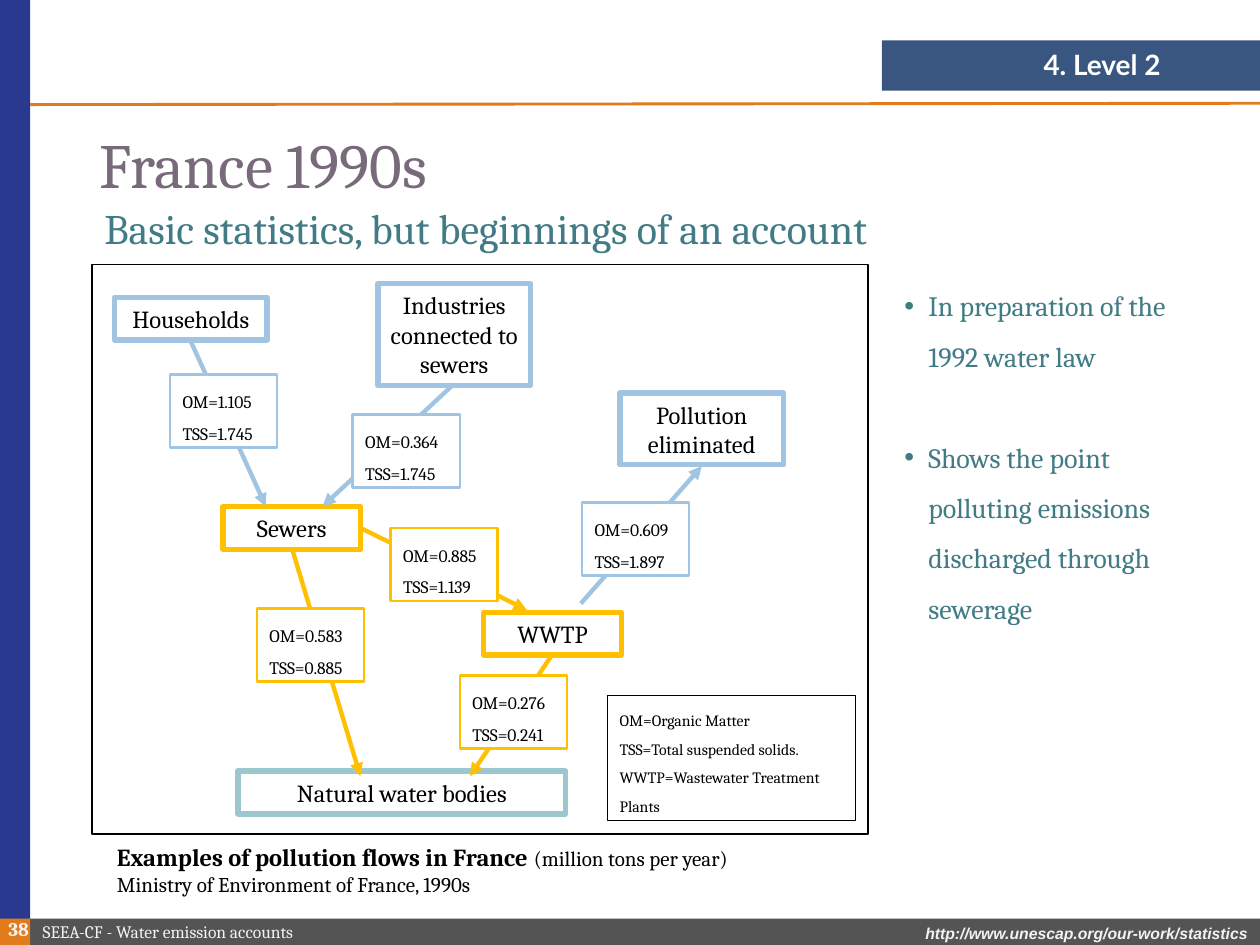
from dataclasses import dataclass

from lxml import etree
from pptx import Presentation
from pptx.dml.color import RGBColor
from pptx.enum.shapes import MSO_CONNECTOR, MSO_SHAPE
from pptx.enum.text import MSO_ANCHOR, PP_ALIGN
from pptx.oxml.ns import qn
from pptx.util import Inches, Pt

RECT, STRAIGHT = MSO_SHAPE.RECTANGLE, MSO_CONNECTOR.STRAIGHT
TOP, MIDDLE = MSO_ANCHOR.TOP, MSO_ANCHOR.MIDDLE
LEFT, CENTER, RIGHT = PP_ALIGN.LEFT, PP_ALIGN.CENTER, PP_ALIGN.RIGHT


@dataclass(frozen=True)
class Theme:
    serif: str = "Cambria"
    sans: str = "Arial"
    badge_font: str = "Lato"
    black: str = "000000"
    white: str = "FFFFFF"
    pale: str = "F2F2F2"
    navy: str = "2A3990"
    badge: str = "395681"
    grey: str = "545454"
    orange: str = "E17B1C"
    mauve: str = "78697B"
    teal: str = "417B85"
    source: str = "A1C4E3"
    treatment: str = "FFC000"
    water: str = "9CC7CE"
    title: int = 36
    subtitle: int = 24
    body: int = 16
    node: int = 14
    caption: int = 12
    number: int = 11
    label: int = 10
    small: int = 9


THEME = Theme()


@dataclass(frozen=True)
class Box:
    left: float
    top: float
    width: float
    height: float

    def inner(self, left, top, width, height):
        return Box(self.left + left, self.top + top, width, height)

    def point(self, x, y):
        return Inches(self.left + x), Inches(self.top + y)

    def emu(self):
        return [Inches(v) for v in (self.left, self.top, self.width, self.height)]


def rgb(value):
    return RGBColor.from_string(value)


def style(font, size, color, name=THEME.serif, bold=None, italic=None):
    font.size, font.name, font.bold, font.italic = Pt(size), name, bold, italic
    font.color.rgb = rgb(color)


def write(shape, lines, size, color, align=LEFT, anchor=TOP, spacing=None, **looks):
    frame = shape.text_frame
    frame.word_wrap = True
    frame.vertical_anchor = anchor
    for index, line in enumerate(lines):
        paragraph = frame.paragraphs[0] if index == 0 else frame.add_paragraph()
        paragraph.text = line
        paragraph.alignment = align
        if spacing:
            paragraph.line_spacing = spacing
        style(paragraph.font, size, color, **looks)
    return frame


def add_text(slide, box, lines, size, color, **looks):
    return write(slide.shapes.add_textbox(*box.emu()), lines, size, color, **looks)


def add_panel(slide, box, fill=None, line=None, weight=0.75):
    panel = slide.shapes.add_shape(RECT, *box.emu())
    panel.shadow.inherit = False
    if fill:
        panel.fill.solid()
        panel.fill.fore_color.rgb = rgb(fill)
    else:
        panel.fill.background()
    if line:
        panel.line.color.rgb = rgb(line)
        panel.line.width = Pt(weight)
    else:
        panel.line.fill.background()
    return panel


def add_line(slide, start, end, color, weight, arrow=False):
    line = slide.shapes.add_connector(STRAIGHT, *start, *end)
    line.line.color.rgb = rgb(color)
    line.line.width = Pt(weight)
    if arrow:
        etree.SubElement(line.line._get_or_add_ln(), qn("a:tailEnd"), type="triangle")
    etree.SubElement(line._element.spPr, qn("a:effectLst"))


def add_frame(slide, page):
    add_panel(slide, page.inner(0, 0, 0.24, page.height), THEME.navy)
    add_line(slide, page.point(0.24, 0.83), page.point(page.width, 0.82), THEME.orange, 1.65)


def add_badge(slide, box):
    add_panel(slide, box, THEME.badge)
    add_text(slide, box.inner(0, 0.01, 2.31, 0.37), ["4. Level 2"], THEME.body, THEME.white,
             align=RIGHT, name=THEME.badge_font, bold=True)


def add_footer(slide, box):
    bar_left = 0.24
    add_panel(slide, box.inner(bar_left, 0, box.width - bar_left, box.height), THEME.grey)
    add_panel(slide, box.inner(0, 0, bar_left, box.height), THEME.orange)
    add_text(slide, box.inner(6.26, -0.01, 3.74, 0.25),
             ["http://www.unescap.org/our-work/statistics"], THEME.small, THEME.pale,
             align=RIGHT, name=THEME.sans, bold=True, italic=True)
    add_text(slide, box.inner(bar_left, 0, 2.99, 0.2), ["SEEA-CF - Water emission accounts"],
             THEME.label, THEME.pale, anchor=MIDDLE)
    number = add_text(slide, box.inner(0, -0.07, 0.23, 0.31), ["38"], THEME.number, THEME.pale,
                      align=RIGHT, anchor=MIDDLE, bold=True)
    number.margin_left = number.margin_right = 0


def add_heading(slide, box):
    add_text(slide, box.inner(0, 0, 8.62, 0.89), ["France 1990s"], THEME.title, THEME.mauve,
             anchor=MIDDLE, spacing=0.9)
    add_text(slide, box.inner(0.04, 0.71, 7.54, 0.7),
             ["Basic statistics, but beginnings of an account"],
             THEME.subtitle, THEME.teal, spacing=0.9)


def add_flow_diagram(slide, box):
    nodes = [
        ("Natural water bodies", (1.16, 4.02, 2.6, 0.34), THEME.water),
        ("Households", (0.18, 0.26, 1.21, 0.34), THEME.source),
        ("Sewers", (1.04, 1.92, 1.09, 0.34), THEME.treatment),
        ("Industries connected to sewers", (2.27, 0.15, 1.21, 0.81), THEME.source),
        ("Pollution eliminated", (4.19, 1.02, 1.3, 0.57), THEME.source),
        ("WWTP", (3.11, 2.76, 1.09, 0.34), THEME.treatment),
    ]
    flows = [
        ((0.78, 0.6), (1.38, 1.92), (0.62, 0.87), "1.105", "1.745", THEME.source),
        ((2.87, 0.95), (1.83, 1.92), (2.07, 1.19), "0.364", "1.745", THEME.source),
        ((2.13, 2.09), (3.45, 2.74), (2.37, 2.09), "0.885", "1.139", THEME.treatment),
        ((3.88, 2.69), (4.84, 1.6), (3.89, 1.89), "0.609", "1.897", THEME.source),
        ((1.59, 2.26), (2.13, 4.06), (1.31, 2.73), "0.583", "0.885", THEME.treatment),
        ((3.65, 3.1), (3, 4.06), (2.92, 3.26), "0.276", "0.241", THEME.treatment),
    ]
    add_panel(slide, box, line=THEME.black)
    for name, place, color in nodes:
        node = add_panel(slide, box.inner(*place), line=color, weight=3)
        write(node, [name], THEME.node, THEME.black, align=CENTER, anchor=MIDDLE)
    for start, end, corner, organic, solids, color in flows:
        add_line(slide, box.point(*start), box.point(*end), color, 2.5, arrow=True)
        label = add_panel(slide, box.inner(*corner, 0.85, 0.58), THEME.white, color, 1.5)
        amounts = write(label, [f"OM={organic}", f"TSS={solids}"], THEME.label, THEME.black,
                        spacing=1.5)
        amounts.margin_right = 0
    legend = add_panel(slide, box.inner(4.09, 3.42, 1.97, 0.99), line=THEME.black)
    write(legend, ["OM=Organic Matter", "TSS=Total suspended solids.",
                   "WWTP=Wastewater Treatment Plants"], THEME.small, THEME.black, spacing=1.5)


def add_caption(slide, box):
    caption = add_text(slide, box, ["", "Ministry of Environment of France, 1990s"],
                       THEME.caption, THEME.black, anchor=MIDDLE)
    heading = caption.paragraphs[0]
    for words, size, bold in (("Examples of pollution flows in France ", THEME.node, True),
                              ("(million tons per year)", THEME.caption, False)):
        run = heading.add_run()
        run.text = words
        style(run.font, size, THEME.black, bold=bold)


def add_remarks(slide, box):
    remarks = slide.shapes.add_textbox(*box.emu()).text_frame
    remarks.word_wrap = True
    points = ["In preparation of the 1992 water law",
              "Shows the point polluting emissions discharged through sewerage"]
    for index, point in enumerate(points):
        paragraph = remarks.paragraphs[0] if index == 0 else remarks.add_paragraph()
        paragraph.text = point
        paragraph.line_spacing = 1.5
        if index:
            paragraph.space_before = Pt(29)
        properties = paragraph._p.get_or_add_pPr()
        properties.set("marL", str(Inches(0.19)))
        properties.set("indent", str(-Inches(0.19)))
        etree.SubElement(properties, qn("a:buFont"), typeface=THEME.sans)
        etree.SubElement(properties, qn("a:buChar"), char="•")
        style(paragraph.font, THEME.body, THEME.teal)


def main():
    presentation = Presentation()
    presentation.slide_width, presentation.slide_height = Inches(10), Inches(7.5)
    slide = presentation.slides.add_slide(presentation.slide_layouts[6])
    add_frame(slide, Box(0, 0, 10, 7.5))
    add_badge(slide, Box(7, 0.32, 3, 0.4))
    add_footer(slide, Box(0, 7.29, 10, 0.21))
    add_heading(slide, Box(0.69, 0.89, 8.62, 1.41))
    add_flow_diagram(slide, Box(0.73, 2.1, 6.16, 4.52))
    add_caption(slide, Box(0.83, 6.73, 5.67, 0.34))
    add_remarks(slide, Box(7.08, 2.11, 2.6, 2.89))
    presentation.save("out.pptx")


if __name__ == "__main__":
    main()
